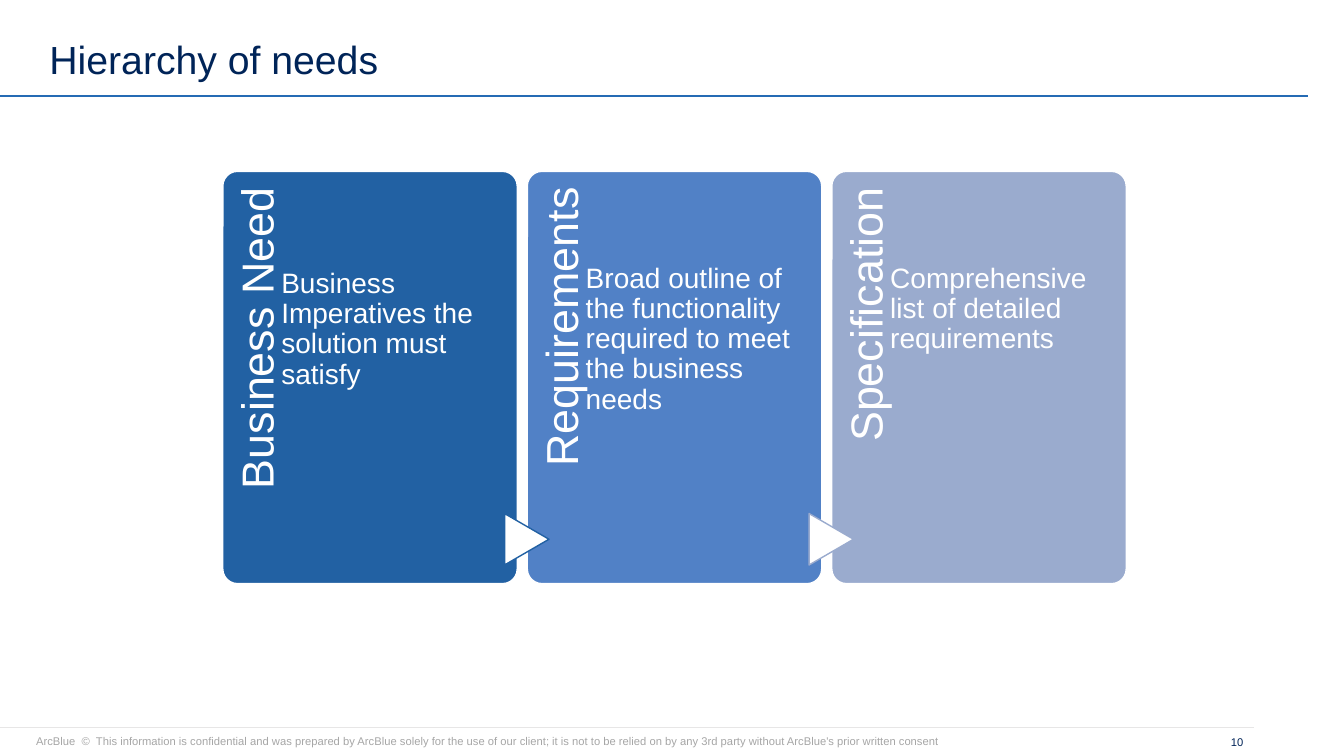
import lxml.etree
import pptx
import pptx.dml.color
import pptx.enum.shapes
import pptx.enum.text
import pptx.oxml.ns
import pptx.util

Inches = pptx.util.Inches
Pt = pptx.util.Pt
Align = pptx.enum.text.PP_ALIGN
Anchor = pptx.enum.text.MSO_ANCHOR
Shape = pptx.enum.shapes.MSO_SHAPE


def tint(code):
    return pptx.dml.color.RGBColor.from_string(code)


def write(frame, text, size=20, color="FFFFFF", font="Arial", align=Align.LEFT,
          anchor=Anchor.TOP, inset=(0.1, 0.05, 0.1, 0.05), space=None):
    frame.word_wrap = True
    frame.auto_size = pptx.enum.text.MSO_AUTO_SIZE.NONE
    frame.vertical_anchor = anchor
    (frame.margin_left, frame.margin_top,
     frame.margin_right, frame.margin_bottom) = map(Inches, inset)
    para = frame.paragraphs[0]
    para.alignment = align
    para.line_spacing = space
    run = para.add_run()
    run.text = text
    run.font.name = font
    run.font.size = Pt(size)
    run.font.color.rgb = tint(color)


class Deck:
    """Hold the style and current slide, and draw each kind of element."""

    navy = "002458"
    white = "FFFFFF"

    def __init__(self):
        self.show = pptx.Presentation()
        self.show.slide_width = Inches(13.33)
        self.show.slide_height = Inches(7.5)
        self.slide = self.show.slides.add_slide(self.show.slide_layouts[5])

    def title(self, text, box):
        head = self.slide.shapes.title
        head.left, head.top, head.width, head.height = map(Inches, box)
        write(head.text_frame, text, size=28, color=self.navy,
              anchor=Anchor.BOTTOM, space=0.9)

    def text(self, text, box, turn=0, **style):
        label = self.slide.shapes.add_textbox(*map(Inches, box))
        label.rotation = turn
        write(label.text_frame, text, **style)

    def shape(self, kind, box, fill, edge, turn=0):
        item = self.slide.shapes.add_shape(kind, *map(Inches, box))
        item.shadow.inherit = False
        item.rotation = turn
        item.fill.solid()
        item.fill.fore_color.rgb = tint(fill)
        item.line.color.rgb = tint(edge)
        item.line.width = Pt(1)
        return item

    def rule(self, end, y, color, width):
        line = self.slide.shapes.add_connector(
            pptx.enum.shapes.MSO_CONNECTOR.STRAIGHT,
            Inches(0), Inches(y), Inches(end), Inches(y))
        line.line.color.rgb = tint(color)
        line.line.width = Pt(width)
        lxml.etree.SubElement(line._element.spPr, pptx.oxml.ns.qn("a:effectLst"))

    def card(self, left, name, note, drop, fill):
        top, high = 1.7, 4.09
        card = self.shape(Shape.ROUNDED_RECTANGLE, (left, top, 2.92, high),
                          fill, self.white)
        card.adjustments[0] = 0.05
        self.text(name, (left - 1.39, 3.09, 3.36, 0.58), turn=270, size=32,
                  align=Align.RIGHT, inset=(0, 0.12, 0.16, 0), space=0.9)
        self.text(note, (left + 0.58, top + drop, 2.17, high - drop),
                  inset=(0, 0, 0, 0), space=0.9)

    def arrow(self, left, edge):
        self.shape(Shape.FLOWCHART_EXTRACT, (left, 5.13, 0.51, 0.44),
                   self.white, edge, turn=90)


def main():
    deck = Deck()
    deck.title("Hierarchy of needs", (0.39, 0, 12.56, 0.87))
    deck.rule(12.97, 0.95, "256BB4", 1.5)
    deck.rule(12.44, 7.22, "E7E6E6", 0.75)
    deck.text("ArcBlue  ©  This information is confidential and was prepared by "
              "ArcBlue solely for the use of our client; it is not to be relied on "
              "by any 3rd party without ArcBlue's prior written consent",
              (0.26, 7.24, 9.36, 0.24), size=8, color="A6A6A6")
    deck.text("10", (11.92, 7.24, 0.51, 0.24), size=8, color=deck.navy,
              align=Align.RIGHT, anchor=Anchor.MIDDLE)

    cards = [
        ("Business Need", "Business Imperatives the solution must satisfy",
         0.97, "2261A3"),
        ("Requirements", "Broad outline of the functionality required to meet "
         "the business needs", 0.92, "5181C6"),
        ("Specification", "Comprehensive list of detailed  requirements",
         0.92, "9AABCE"),
    ]
    first, step = 2.21, 3.02
    for i, card in enumerate(cards):
        deck.card(first + i * step, *card)
    for i, edge in enumerate(("2261A3", "9AABCE"), 1):
        deck.arrow(first + i * step - 0.26, edge)
    deck.show.save("out.pptx")


if __name__ == "__main__":
    main()
